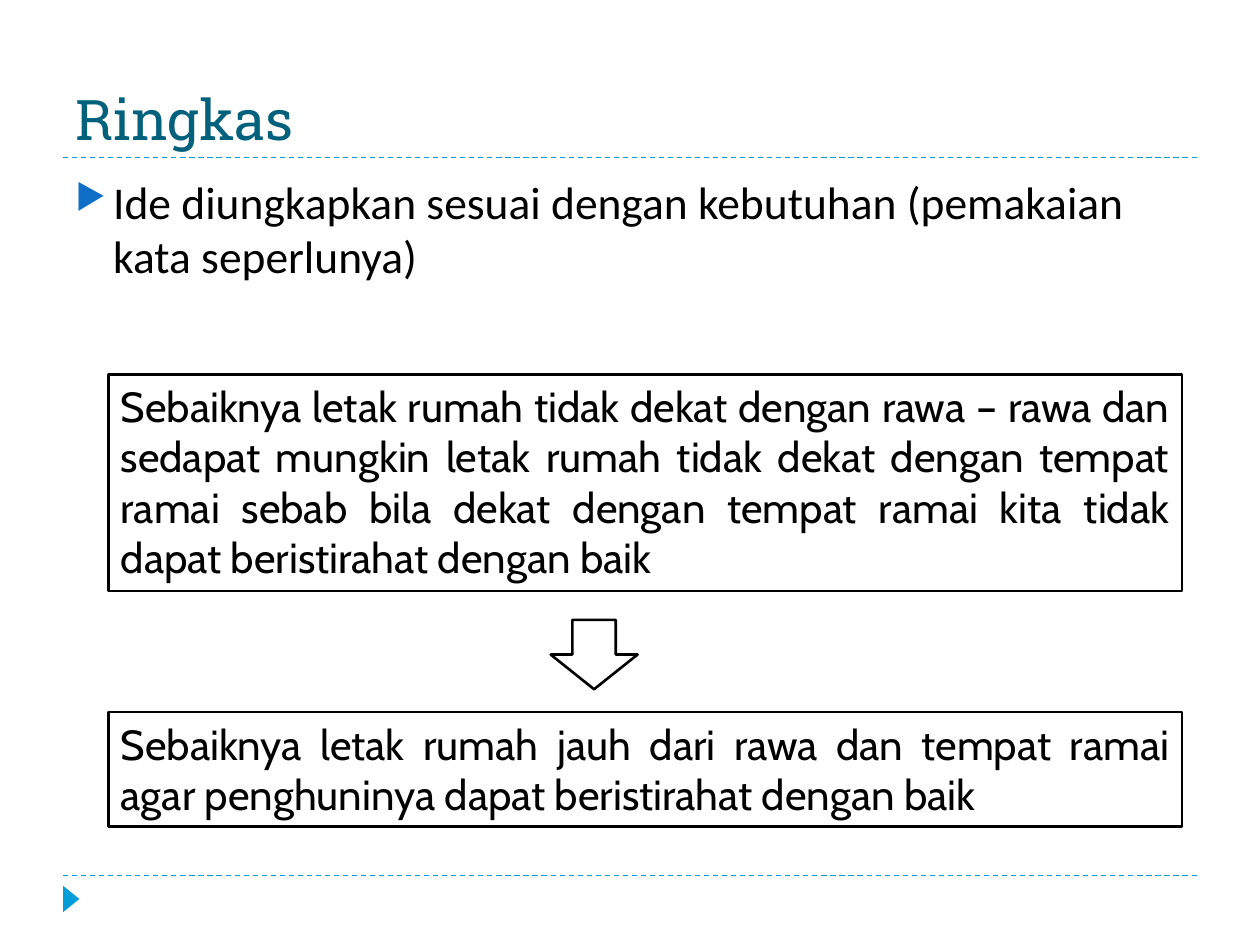
from lxml.etree import SubElement
from pptx import Presentation
from pptx.dml.color import RGBColor
from pptx.enum.dml import MSO_LINE
from pptx.enum.shapes import MSO_CONNECTOR, MSO_SHAPE
from pptx.enum.text import MSO_ANCHOR, PP_ALIGN
from pptx.oxml.ns import qn
from pptx.util import Pt

TITLE = "Ringkas"
IDEA = "Ide diungkapkan sesuai dengan kebutuhan (pemakaian kata seperlunya)"
# top, height, sentence
EXAMPLES = [
    (213.84, 123.84, "Sebaiknya letak rumah tidak dekat dengan rawa – rawa dan "
     "sedapat mungkin letak rumah tidak dekat dengan tempat ramai sebab bila "
     "dekat dengan tempat ramai kita tidak dapat beristirahat dengan baik"),
    (406.8, 65.52, "Sebaiknya letak rumah jauh dari rawa dan tempat ramai "
     "agar penghuninya dapat beristirahat dengan baik"),
]
RULE_TOPS = (500.4, 90)
MARGIN, WIDTH = 36, 648
BLACK, WHITE, ACCENT = "000000", "FFFFFF", "009DD9"


def color(hex_code):
    return RGBColor.from_string(hex_code)


def add_shape(kind, left, top, width, height, fill, outline=None):
    shape = slide.shapes.add_shape(kind, Pt(left), Pt(top), Pt(width), Pt(height))
    shape.shadow.inherit = False
    shape.fill.solid()
    shape.fill.fore_color.rgb = color(fill)
    if outline:
        shape.line.color.rgb = color(outline)
        shape.line.width = Pt(1.5)
    else:
        shape.line.fill.background()
    return shape


def write(shape, text, font, size, hex_code, align=PP_ALIGN.LEFT, anchor=MSO_ANCHOR.TOP):
    frame = shape.text_frame
    frame.word_wrap = True
    frame.vertical_anchor = anchor
    frame.text = text
    paragraph = frame.paragraphs[0]
    paragraph.alignment = align
    style = paragraph.runs[0].font
    style.name, style.size, style.color.rgb = font, Pt(size), color(hex_code)
    return paragraph


def add_bullet(paragraph, symbol, hex_code, percent, indent):
    paragraph.space_before = Pt(6)
    props = paragraph._p.get_or_add_pPr()
    props.set("marL", str(Pt(indent)))
    props.set("indent", str(-Pt(indent)))
    SubElement(SubElement(props, qn("a:buClr")), qn("a:srgbClr"), val=hex_code)
    SubElement(props, qn("a:buSzPct"), val=str(percent * 1000))
    SubElement(props, qn("a:buChar"), char=symbol)


prs = Presentation()
prs.slide_width, prs.slide_height = Pt(720), Pt(540)
slide = prs.slides.add_slide(prs.slide_layouts[6])

for top in RULE_TOPS:
    rule = slide.shapes.add_connector(
        MSO_CONNECTOR.STRAIGHT, Pt(MARGIN), Pt(top), Pt(MARGIN + WIDTH), Pt(top))
    rule.line.color.rgb = color(ACCENT)
    rule.line.width = Pt(0.75)
    rule.line.dash_style = MSO_LINE.DASH
    SubElement(rule._element.spPr, qn("a:effectLst"))

page_marker = add_shape(MSO_SHAPE.ISOSCELES_TRIANGLE, 33.12, 509.04, 15.12, 9.36, ACCENT)
page_marker.rotation = 90

title = slide.shapes.add_textbox(Pt(MARGIN), Pt(12.24), Pt(WIDTH), Pt(77.76))
write(title, TITLE, "Roboto Slab", 32, "04617B", anchor=MSO_ANCHOR.BOTTOM)

idea = slide.shapes.add_textbox(Pt(MARGIN), Pt(95.76), Pt(WIDTH), Pt(388.8))
add_bullet(write(idea, IDEA, "Calibri", 26, BLACK), "▶", "0F6FC6", 76, 21.6)

for top, height, sentence in EXAMPLES:
    box = add_shape(MSO_SHAPE.RECTANGLE, 61.92, top, 613.44, height, WHITE, BLACK)
    write(box, sentence, "Cabin", 24, BLACK, PP_ALIGN.JUSTIFY)

add_shape(MSO_SHAPE.DOWN_ARROW, 314.64, 354.24, 49.68, 39.6, WHITE, BLACK)

prs.save("out.pptx")
